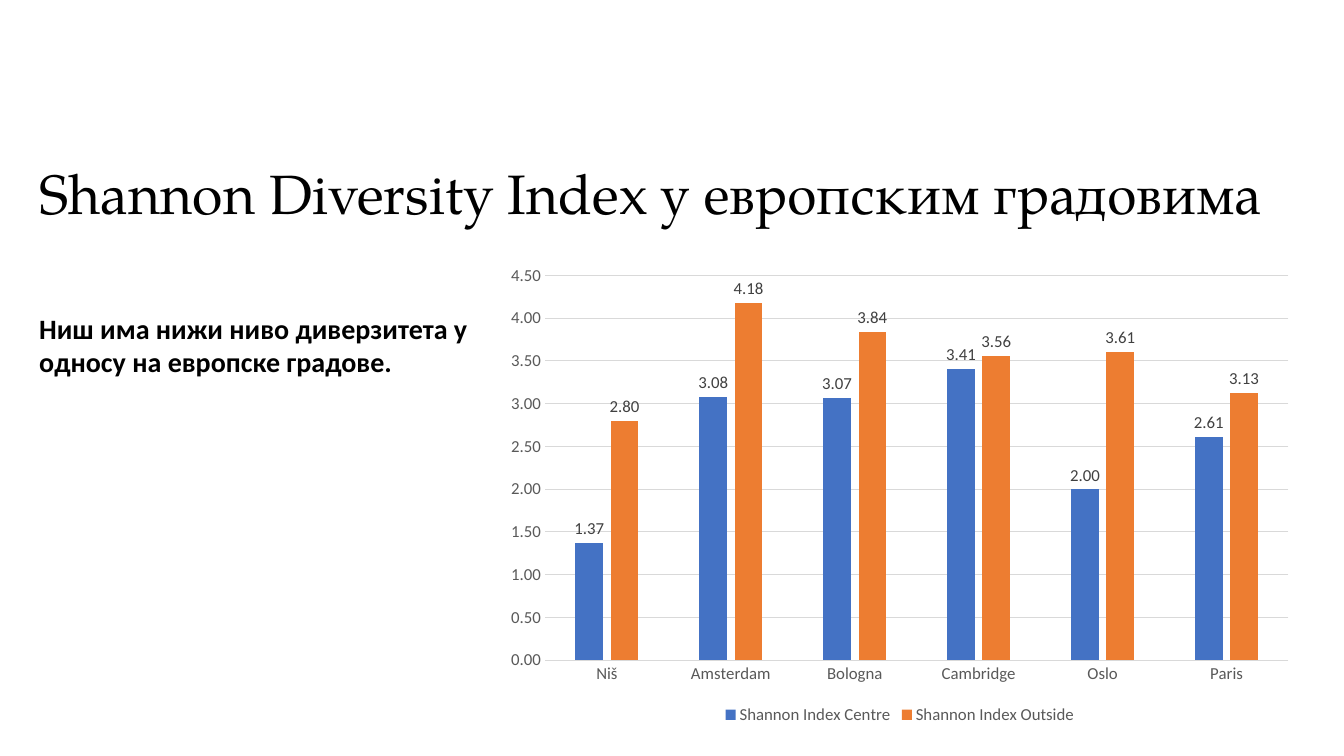
from pptx import Presentation
from pptx.chart.data import CategoryChartData
from pptx.dml.color import RGBColor
from pptx.enum.chart import (XL_CHART_TYPE, XL_LABEL_POSITION,
                             XL_LEGEND_POSITION, XL_TICK_MARK)
from pptx.enum.text import MSO_ANCHOR
from pptx.util import Inches, Pt

CLUSTERED = XL_CHART_TYPE.COLUMN_CLUSTERED
OUTSIDE_END = XL_LABEL_POSITION.OUTSIDE_END
BOTTOM = XL_LEGEND_POSITION.BOTTOM
NO_TICK = XL_TICK_MARK.NONE
TOP, MIDDLE = MSO_ANCHOR.TOP, MSO_ANCHOR.MIDDLE

COLORS = {"text": "000000", "axis": "595959", "label": "404040",
          "grid": "D9D9D9", "centre": "4472C4", "outside": "ED7D31"}
BODY_FONT, TITLE_FONT = "Calibri", "TeX Gyre Pagella"

CITIES = ["Niš", "Amsterdam", "Bologna", "Cambridge", "Oslo", "Paris"]
SERIES = [
    ("Shannon Index Centre", "centre", [1.37, 3.08, 3.07, 3.41, 2.00, 2.61]),
    ("Shannon Index Outside", "outside", [2.80, 4.18, 3.84, 3.56, 3.61, 3.13]),
]

# Boxes in inches: left, top, width, height
MARGIN = 0.29
TITLE_BOX = (MARGIN, 1.45, 12.87, 0.99)
NOTE_BOX = (MARGIN, 3.04, 4.52, 0.77)
CHART_BOX = (4.91, 2.54, 8.03, 4.69)


def rgb(name):
    return RGBColor.from_string(COLORS[name])


def set_font(font, size, color, name=BODY_FONT, bold=False):
    font.size, font.name, font.bold = Pt(size), name, bold
    font.color.rgb = rgb(color)


def set_line(line, color):
    line.width = Pt(0.75)
    line.color.rgb = rgb(color)


def add_text(s, box, text, size, name=BODY_FONT, bold=False,
             anchor=TOP, spacing=1.0):
    tf = s.shapes.add_textbox(*map(Inches, box)).text_frame
    tf.word_wrap = True
    tf.vertical_anchor = anchor
    p = tf.paragraphs[0]
    p.line_spacing = spacing
    r = p.add_run()
    r.text = text
    set_font(r.font, size, "text", name, bold)


def add_index_chart(s, box):
    data = CategoryChartData(number_format="0.00")
    data.categories = CITIES
    for name, _, values in SERIES:
        data.add_series(name, values)
    chart = s.shapes.add_chart(CLUSTERED, *map(Inches, box), data).chart
    set_font(chart.font, 10, "text")
    chart.has_title = False

    # Legend
    chart.has_legend = True
    chart.legend.position = BOTTOM
    chart.legend.include_in_layout = False
    set_font(chart.legend.font, 12, "axis")

    # Axes
    cat, val = chart.category_axis, chart.value_axis
    for axis in (cat, val):
        axis.major_tick_mark = axis.minor_tick_mark = NO_TICK
        set_font(axis.tick_labels.font, 12, "axis")
    set_line(cat.format.line, "grid")
    val.format.line.fill.background()
    val.minimum_scale, val.maximum_scale, val.major_unit = 0, 4.5, 0.5
    val.tick_labels.number_format = "0.00"
    val.tick_labels.number_format_is_linked = False
    val.has_major_gridlines = True
    set_line(val.major_gridlines.format.line, "grid")

    # Columns and their values
    plot = chart.plots[0]
    plot.gap_width, plot.overlap = 219, -27
    plot.vary_by_categories = False
    for series, (_, color, _) in zip(plot.series, SERIES):
        series.format.fill.solid()
        series.format.fill.fore_color.rgb = rgb(color)
        series.invert_if_negative = False
        labels = series.data_labels
        labels.show_value = True
        labels.position = OUTSIDE_END
        labels.number_format = "0.00"
        labels.number_format_is_linked = False
        set_font(labels.font, 12, "label")


def main():
    prs = Presentation()
    prs.slide_width, prs.slide_height = Inches(13.33), Inches(7.5)
    s = prs.slides.add_slide(prs.slide_layouts[6])
    add_text(s, TITLE_BOX, "Shannon Diversity Index у европским градовима",
             39.6, TITLE_FONT, anchor=MIDDLE, spacing=0.9)
    add_index_chart(s, CHART_BOX)
    add_text(s, NOTE_BOX,
             "Ниш има нижи ниво диверзитета у односу на европске градове.",
             20, bold=True)
    prs.save("out.pptx")


if __name__ == "__main__":
    main()
